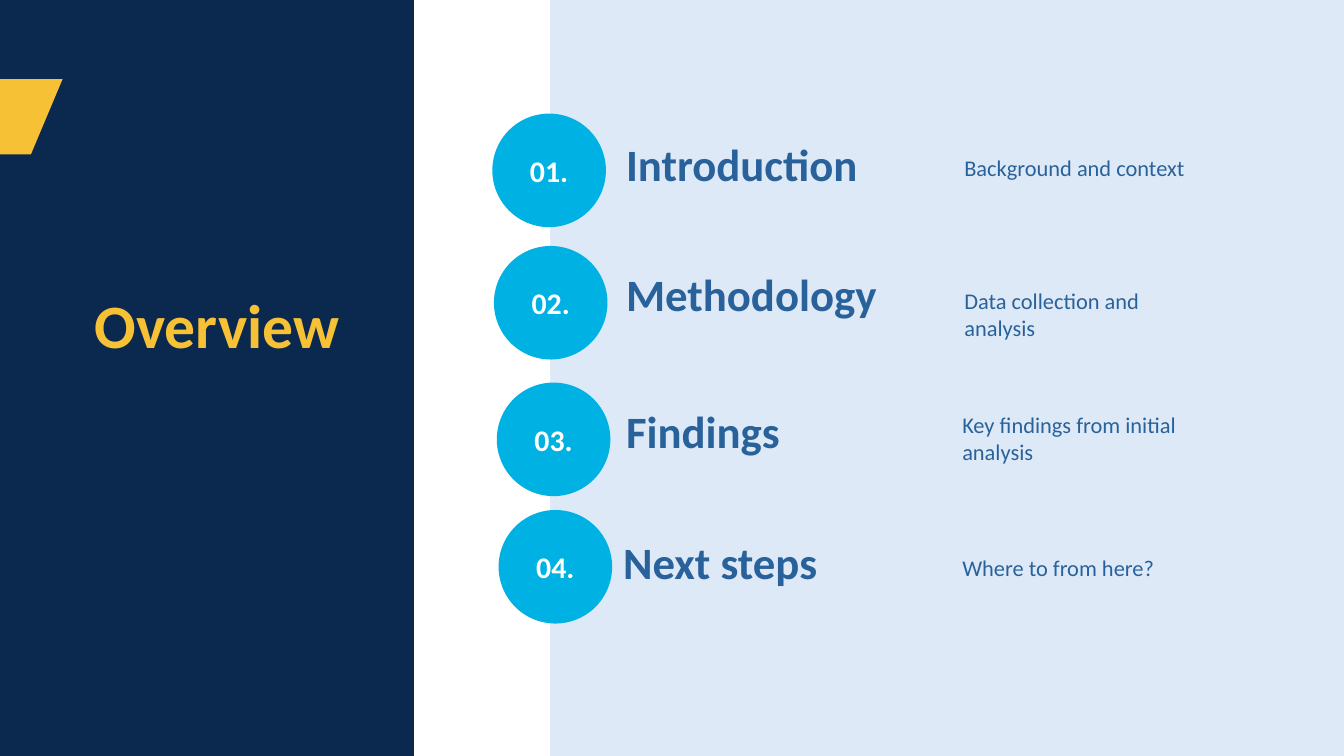
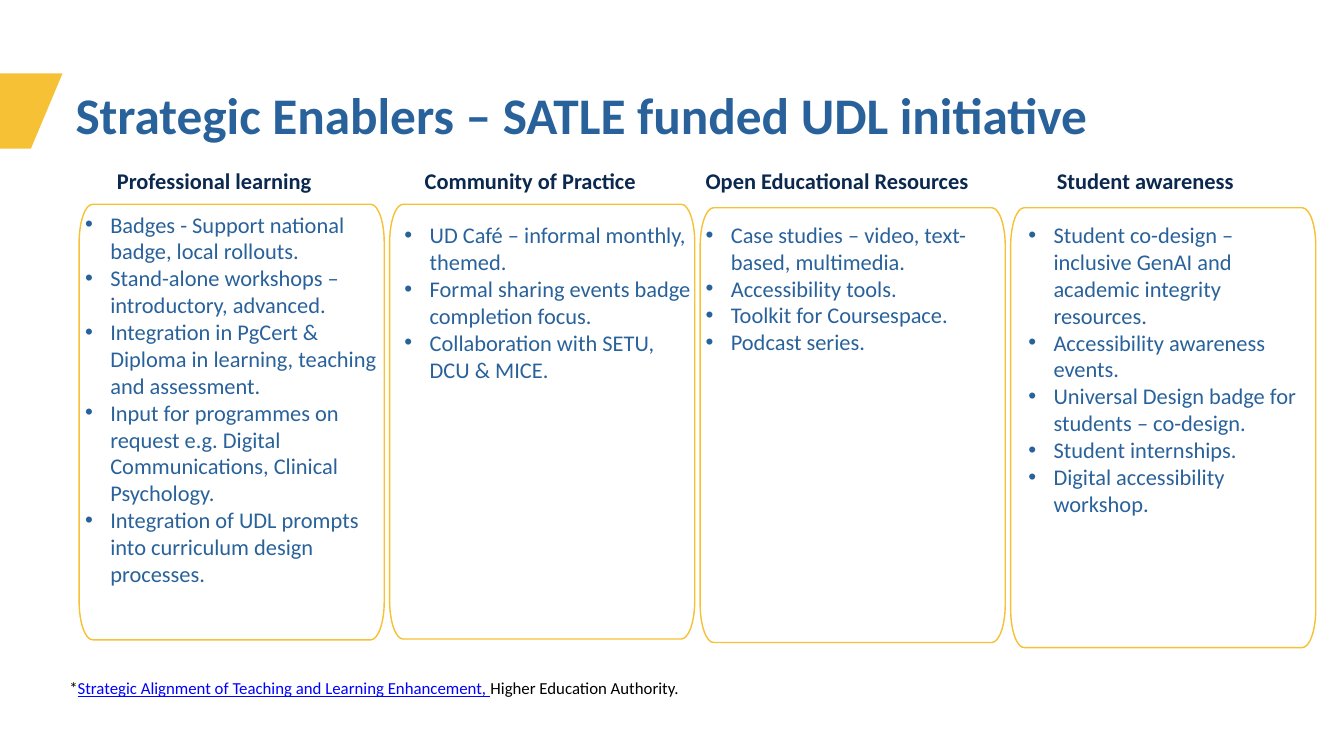
"""Build the overview slide and the strategic enablers slide."""
from dataclasses import dataclass

import pptx
import pptx.dml.color
import pptx.enum.shapes
import pptx.enum.text
import pptx.oxml
import pptx.oxml.ns
import pptx.util
from lxml import etree

Pt = pptx.util.Pt
qn = pptx.oxml.ns.qn
Shape = pptx.enum.shapes.MSO_SHAPE
Align = pptx.enum.text.PP_ALIGN
Anchor = pptx.enum.text.MSO_ANCHOR
AutoSize = pptx.enum.text.MSO_AUTO_SIZE


@dataclass(frozen=True)
class Theme:
    font: str = "Calibri"
    navy: str = "0B284F"
    blue: str = "29629B"
    cyan: str = "00B2E3"
    yellow: str = "F7C135"
    pale: str = "DEE9F7"
    white: str = "FFFFFF"
    black: str = "000000"
    link: str = "0000FF"
    overview: int = 66
    title: int = 55
    topic: int = 48
    number: int = 32
    body: int = 24
    footnote: int = 18
    body_spacing: float = 28.8


def rgb(color):
    return pptx.dml.color.RGBColor.from_string(color)


def apply(target, **values):
    for name, value in values.items():
        setattr(target, name, value)


class SlideBuilder:
    def __init__(self, deck, theme):
        self.deck = deck
        self.theme = theme
        self.page = None

    def new_page(self, color):
        self.page = self.deck.slides.add_slide(self.deck.slide_layouts[6])
        fill = self.page.background.fill
        fill.solid()
        fill.fore_color.rgb = rgb(color)

    def paint(self, shape, fill=None, line=None):
        shape.shadow.inherit = False
        if fill:
            shape.fill.solid()
            shape.fill.fore_color.rgb = rgb(fill)
        else:
            shape.fill.background()
        if line:
            shape.line.color.rgb = rgb(line)
            shape.line.width = Pt(1.5)
        else:
            shape.line.fill.background()

    def preset(self, kind, left, top, width, height, fill):
        shape = self.page.shapes.add_shape(
            kind, Pt(left), Pt(top), Pt(width), Pt(height))
        self.paint(shape, fill)
        return shape

    def outline(self, points, fill=None, line=None):
        corners = [(Pt(x), Pt(y)) for x, y in points]
        builder = self.page.shapes.build_freeform(*corners[0])
        builder.add_line_segments(corners[1:], close=True)
        shape = builder.convert_to_shape()
        self.paint(shape, fill, line)
        return shape

    def flag(self, top):
        bottom = top + 80.6
        self.outline([(-18, top), (67, top), (33.1, bottom), (-51.8, bottom)],
                     fill=self.theme.yellow)

    def card(self, left, top, width, height):
        radius_x, radius_y, pull = 14.4, 41, 0.55
        right, bottom = left + width, top + height
        inner_left, inner_right = left + radius_x, right - radius_x
        inner_top, inner_bottom = top + radius_y, bottom - radius_y
        corners = [
            ((inner_right, top), (right, top), (right, inner_top)),
            ((right, inner_bottom), (right, bottom), (inner_right, bottom)),
            ((inner_left, bottom), (left, bottom), (left, inner_bottom)),
            ((left, inner_top), (left, top), (inner_left, top)),
        ]
        points = [(inner_left, top)]
        for entry, corner, leave in corners:
            handles = [tuple(a + pull * (b - a) for a, b in zip(end, corner))
                       for end in (entry, leave)]
            points += [entry, *handles, leave]
        shape = self.outline(points, line=self.theme.yellow)
        lines = list(shape._element.iter(qn("a:lnTo")))
        for start in range(0, 16, 4):
            first, *others = lines[start + 1:start + 4]
            curve = etree.Element(qn("a:cubicBezTo"))
            first.addprevious(curve)
            for segment in (first, *others):
                curve.append(segment[0])
                segment.getparent().remove(segment)

    def style(self, font, size, color, **extra):
        apply(font, name=self.theme.font, size=Pt(size), **extra)
        font.color.rgb = rgb(color)

    def margins(self, frame, across, down):
        apply(frame, margin_left=Pt(across), margin_right=Pt(across),
              margin_top=Pt(down), margin_bottom=Pt(down))

    def frame(self, left, top, width, height, across=0, down=0):
        box = self.page.shapes.add_textbox(
            Pt(left), Pt(top), Pt(width), Pt(height))
        frame = box.text_frame
        apply(frame, word_wrap=True, auto_size=AutoSize.SHAPE_TO_FIT_TEXT)
        self.margins(frame, across, down)
        return frame

    def text(self, words, place, size, color, spacing, bold=False):
        para = self.frame(*place).paragraphs[0]
        para.line_spacing = Pt(spacing)
        span = para.add_run()
        span.text = words
        self.style(span.font, size, color, bold=bold)

    def bullets(self, items, place):
        frame = self.frame(*place)
        for index, item in enumerate(items):
            para = frame.add_paragraph() if index else frame.paragraphs[0]
            properties = para._p.get_or_add_pPr()
            properties.set("marL", str(Pt(27)))
            properties.set("indent", str(Pt(-27)))
            for tag, key, value in (("a:buFont", "typeface", "Arial"),
                                    ("a:buChar", "char", "•")):
                mark = etree.SubElement(properties, qn(tag))
                mark.set(key, value)
            para.line_spacing = Pt(self.theme.body_spacing)
            span = para.add_run()
            span.text = item
            self.style(span.font, self.theme.body, self.theme.blue)

    def number(self, words, left, top):
        circle = self.preset(Shape.OVAL, left, top, 121.7, 121.7,
                             self.theme.cyan)
        frame = circle.text_frame
        frame.vertical_anchor = Anchor.MIDDLE
        self.margins(frame, 4.5, 4.5)
        para = frame.paragraphs[0]
        apply(para, alignment=Align.CENTER, line_spacing=Pt(38.4))
        span = para.add_run()
        span.text = words
        self.style(span.font, self.theme.number, self.theme.white, bold=True)

    def footnote(self, parts, place):
        para = self.frame(*place, across=7.2, down=3.6).paragraphs[0]
        for words, color, underline in parts:
            span = para.add_run()
            span.text = words
            self.style(span.font, self.theme.footnote, color,
                       underline=underline)


def build_overview(slide):
    theme = slide.theme
    slide.new_page(theme.pale)
    slide.preset(Shape.RECTANGLE, 443.5, 0, 146, 810, theme.white)
    slide.preset(Shape.RECTANGLE, 0, 0, 443.5, 810, theme.navy)
    slide.text("Overview", (101.5, 343.4, 340.6, 47.5),
               theme.overview, theme.yellow, 43.2, bold=True)
    agenda = [
        ("Introduction", (527.5, 121.7), (670.8, 146.9, 280, 56.2), 57.6,
         "Background and context", (1033.2, 165.6, 260.6, 27.4)),
        ("Methodology", (529.2, 263.5), (670.8, 295.2, 298.8, 48.2), 48,
         "Data collection and analysis", (1033.2, 307.4, 260.6, 56.9)),
        ("Findings", (532.3, 409.9), (670.8, 432.4, 298.8, 56.2), 57.6,
         "Key findings from initial analysis", (1031, 440.3, 260.6, 56.9)),
        ("Next steps", (534.2, 546.4), (667.6, 573.1, 298.8, 56.2), 57.6,
         "Where to from here?", (1031, 593.3, 260.6, 27.4)),
    ]
    for index, item in enumerate(agenda, start=1):
        topic, circle_at, topic_place, spacing, detail, detail_place = item
        slide.number(f"{index:02}.", *circle_at)
        slide.text(topic, topic_place, theme.topic, theme.blue, spacing,
                   bold=True)
        slide.text(detail, detail_place, theme.body, theme.blue,
                   theme.body_spacing)
    slide.flag(84.8)


def build_enablers(slide):
    theme = slide.theme
    slide.new_page(theme.white)
    slide.flag(78.6)
    slide.text("Strategic Enablers – SATLE funded UDL initiative",
               (80.9, 90.7, 1278, 67), theme.title, theme.blue, 64, bold=True)
    enablers = [
        ("Professional learning", (125.2, 178.7, 265),
         (91.2, 225.7, 316.8, 437), (218.9, 466.6),
         ["Badges - Support national badge, local rollouts.",
          "Stand-alone workshops – introductory, advanced.",
          "Integration in PgCert & Diploma in learning, teaching "
          "and assessment.",
          "Input for programmes on request e.g. Digital Communications, "
          "Clinical Psychology.",
          "Integration of UDL prompts into curriculum design processes."]),
        ("Community of Practice", (455, 178.7, 265),
         (433.4, 237.1, 311.8, 173.5), (218.9, 465.8),
         ["UD Café – informal monthly, themed.",
          "Formal sharing events badge completion focus.",
          "Collaboration with SETU, DCU & MICE."]),
        ("Open Educational Resources", (756, 179, 324.7),
         (756, 236.7, 306, 173.5), (222.6, 465.8),
         ["Case studies – video, text-based, multimedia.",
          "Accessibility tools.",
          "Toolkit for Coursespace.",
          "Podcast series."]),
        ("Student awareness", (1132.3, 179, 259.5),
         (1101.8, 236.9, 302.4, 349.2), (222.6, 471.2),
         ["Student co-design –inclusive GenAI and academic integrity "
          "resources.",
          "Accessibility awareness events.",
          "Universal Design badge for students – co-design.",
          "Student internships.",
          "Digital accessibility workshop."]),
    ]
    for heading, heading_place, list_place, _, items in enablers:
        slide.text(heading, (*heading_place, 27.7), theme.body, theme.navy,
                   theme.body_spacing, bold=True)
        slide.bullets(items, list_place)
    for column, (_, _, _, (top, height), _) in enumerate(enablers):
        slide.card(84.8 + 332.7 * column, top, 326.9, height)
    slide.footnote(
        [("*", theme.black, False),
         ("Strategic Alignment of Teaching and Learning Enhancement, ",
          theme.link, True),
         ("Higher Education Authority.", theme.black, False)],
        (67.2, 722.9, 725, 28.8))


def main():
    deck = pptx.Presentation()
    apply(deck, slide_width=Pt(1440), slide_height=Pt(810))
    slide = SlideBuilder(deck, Theme())
    build_overview(slide)
    build_enablers(slide)
    deck.save("out.pptx")


if __name__ == "__main__":
    main()
